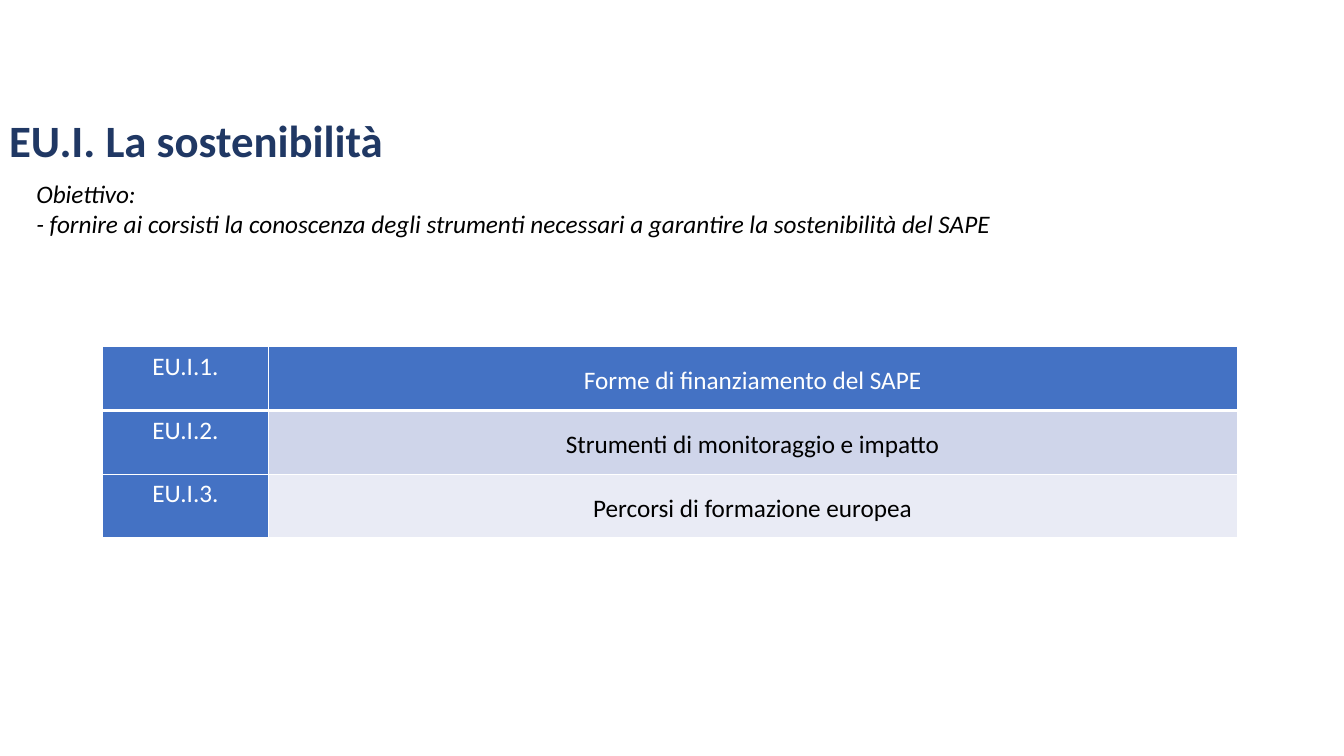
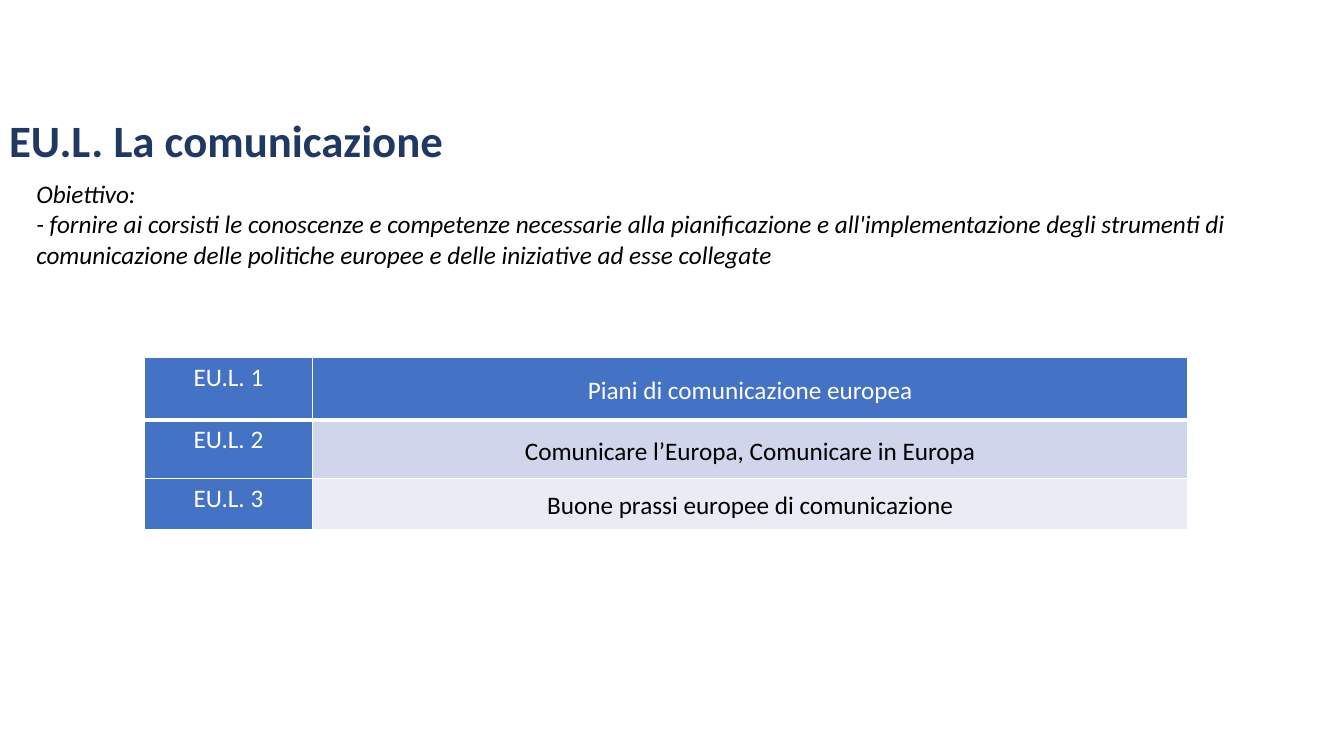
from lxml import etree
from pptx import Presentation
from pptx import util as u
from pptx.dml.color import RGBColor
from pptx.enum import text as t
from pptx.oxml import ns

FONT = "Calibri"
NAVY, BLUE, WHITE, BLACK = "203864", "4472C4", "FFFFFF", "000000"
BANDS = (BLUE, "CFD5EA", "E9EBF5")
TITLE_AND_CONTENT = 1


def color(code):
    return RGBColor.from_string(code)


def write(frame, content, size=18, ink=BLACK, bold=False, italic=False,
          align=t.PP_ALIGN.LEFT, spacing=1.0, after=0, anchor=t.MSO_ANCHOR.TOP):
    """Fill a text frame, one unbulleted paragraph per line of content."""
    frame.text = content
    frame.word_wrap = True
    frame.vertical_anchor = anchor
    for para in frame.paragraphs:
        properties = para._p.get_or_add_pPr()
        properties.set("marL", "0")
        properties.set("indent", "0")
        etree.SubElement(properties, ns.qn("a:buNone"))
        para.alignment = align
        para.line_spacing = spacing
        para.space_before = u.Pt(0)
        para.space_after = u.Pt(after)
        for span in para.runs:
            font = span.font
            font.name, font.size = FONT, u.Pt(size)
            font.bold, font.italic = bold, italic
            font.color.rgb = color(ink)


def draw_borders(cell, **widths):
    """Draw white cell borders; widths are points keyed by side L, R, T, B."""
    properties = cell._tc.get_or_add_tcPr()
    for side, points in widths.items():
        line = etree.SubElement(properties, ns.qn(f"a:ln{side}"), w=str(u.Pt(points)))
        fill = etree.SubElement(line, ns.qn("a:solidFill"))
        etree.SubElement(fill, ns.qn("a:srgbClr"), val=WHITE)


class CourseDeck:
    """Course module slides; all lengths are percentages of the slide size."""

    def __init__(self):
        self.deck = Presentation()
        self.deck.slide_width = u.Inches(13.33)
        self.deck.slide_height = u.Inches(7.5)
        self.slide = None

    def across(self, share):
        return round(self.deck.slide_width * share / 100)

    def down(self, share):
        return round(self.deck.slide_height * share / 100)

    def place(self, box, left, top, width, height):
        box.left, box.top = self.across(left), self.down(top)
        box.width, box.height = self.across(width), self.down(height)

    def add_slide(self):
        layout = self.deck.slide_layouts[TITLE_AND_CONTENT]
        self.slide = self.deck.slides.add_slide(layout)

    def title(self, content):
        box = self.slide.shapes.title
        self.place(box, -0.08, 13.2, 86.27, 11.47)
        write(box.text_frame, content, size=32, ink=NAVY, bold=True,
              spacing=0.9, anchor=t.MSO_ANCHOR.MIDDLE)
        box.text_frame.auto_size = t.MSO_AUTO_SIZE.NONE

    def objective(self, goal, width, height):
        box = self.slide.placeholders[1]
        self.place(box, 1.95, 22.93, width, height)
        write(box.text_frame, f"Obiettivo:\n- {goal}", italic=True)
        box.text_frame.auto_size = t.MSO_AUTO_SIZE.SHAPE_TO_FIT_TEXT

    def unit_table(self, units, left, top, columns, rows, after=0):
        """Table of (code, name) units under a heavier rule below the first row."""
        frame = self.slide.shapes.add_table(
            len(rows), len(columns), self.across(left), self.down(top),
            self.across(sum(columns)), self.down(sum(rows)))
        table = frame.table
        table.horz_banding = False
        for column, width in zip(table.columns, columns):
            column.width = self.across(width)
        for r, (unit, height) in enumerate(zip(units, rows)):
            table.rows[r].height = self.down(height)
            for c, content in enumerate(unit):
                cell = table.cell(r, c)
                is_code = c == 0
                cell.margin_left = cell.margin_right = u.Inches(0.07)
                cell.margin_top = cell.margin_bottom = 0
                write(cell.text_frame, content,
                      ink=WHITE if is_code or r == 0 else BLACK,
                      align=t.PP_ALIGN.CENTER, spacing=1.15, after=after)
                cell.vertical_anchor = t.MSO_ANCHOR.TOP if is_code else t.MSO_ANCHOR.MIDDLE
                draw_borders(cell, L=1, R=1, T=3 if r == 1 else 1, B=3 if r == 0 else 1)
                cell.fill.solid()
                cell.fill.fore_color.rgb = color(BLUE if is_code else BANDS[r])


def main():
    course = CourseDeck()

    course.add_slide()
    course.title("EU.I. La sostenibilità")
    course.objective("fornire ai corsisti la conoscenza degli strumenti necessari "
                     "a garantire la sostenibilità del SAPE", 86.95, 9.47)
    course.unit_table([("EU.I.1.", "Forme di finanziamento del SAPE"),
                       ("EU.I.2.", "Strumenti di monitoraggio e impatto"),
                       ("EU.I.3.", "Percorsi di formazione europea")],
                      7.65, 45.87, (12.3, 72.1), (8.44,) * 3, after=10)

    course.add_slide()
    course.title("EU.L. La comunicazione")
    course.objective("fornire ai corsisti le conoscenze e competenze necessarie alla "
                     "pianificazione e all'implementazione degli strumenti di comunicazione "
                     "delle politiche europee e delle iniziative ad esse collegate",
                     94.52, 13.47)
    course.unit_table([("EU.L. 1", "Piani di comunicazione europea"),
                       ("EU.L. 2", "Comunicare l’Europa, Comunicare in Europa"),
                       ("EU.L. 3", "Buone prassi europee di comunicazione")],
                      10.73, 47.33, (12.53, 65.12), (8.27, 7.73, 6.67))

    course.deck.save("out.pptx")


if __name__ == "__main__":
    main()
